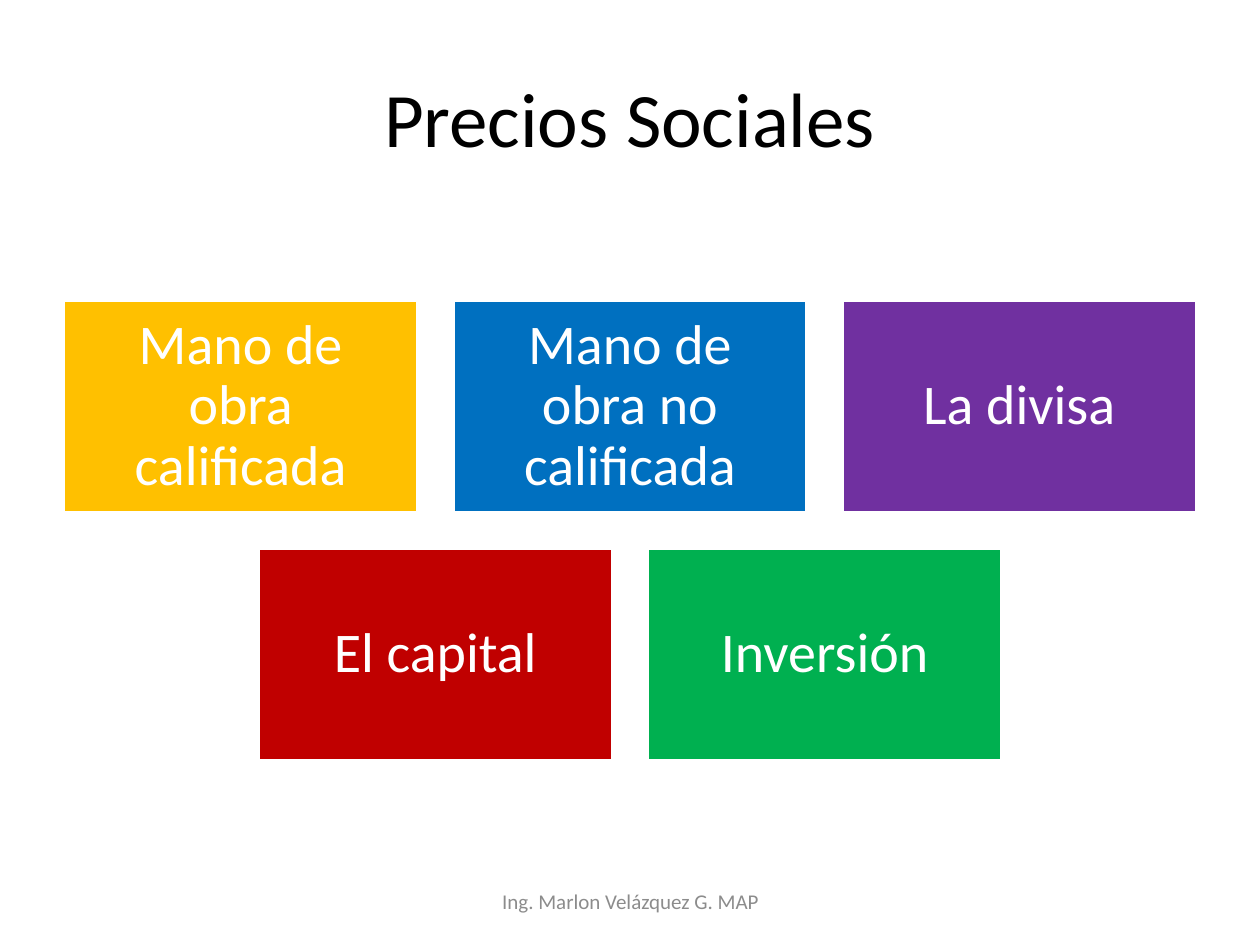
from pptx import Presentation
from pptx.dml.color import RGBColor
from pptx.enum.shapes import MSO_SHAPE
from pptx.enum.text import MSO_ANCHOR, PP_ALIGN
from pptx.util import Inches, Pt

RECTANGLE = MSO_SHAPE.RECTANGLE
MIDDLE = MSO_ANCHOR.MIDDLE
CENTER = PP_ALIGN.CENTER
SLIDE_WIDTH, SLIDE_HEIGHT = 10, 7.5
BOX_WIDTH, BOX_HEIGHT, GAP = 2.81, 1.69, 0.28
ROWS_TOP = 2.38


def rgb(value):
    return RGBColor.from_string(value)


def write_text(shape, text, size, color, margins=(0.1, 0.05), spacing=1.0):
    frame = shape.text_frame
    side, edge = (Inches(margin) for margin in margins)
    frame_format = {
        "word_wrap": True, "vertical_anchor": MIDDLE,
        "margin_left": side, "margin_right": side,
        "margin_top": edge, "margin_bottom": edge,
    }
    for name, value in frame_format.items():
        setattr(frame, name, value)
    para = frame.paragraphs[0]
    para.alignment = CENTER
    para.line_spacing = spacing
    span = para.add_run()
    span.text = text
    for name, value in {"name": "Calibri", "size": Pt(size)}.items():
        setattr(span.font, name, value)
    span.font.color.rgb = rgb(color)


deck = Presentation()
deck.slide_width, deck.slide_height = Inches(SLIDE_WIDTH), Inches(SLIDE_HEIGHT)
page = deck.slides.add_slide(deck.slide_layouts[5])

# Title
title = page.shapes.title
title.left, title.top = Inches(0.5), Inches(0.3)
title.width, title.height = Inches(9), Inches(1.25)
write_text(title, "Precios Sociales", 44, "000000")

# Colored boxes, each row centered on the slide
rows = [
    [("Mano de obra calificada", "FFC000"),
     ("Mano de obra no calificada", "0070C0"),
     ("La divisa", "7030A0")],
    [("El capital", "C00000"), ("Inversión", "00B050")],
]
for row_index, row in enumerate(rows):
    row_width = len(row) * (BOX_WIDTH + GAP) - GAP
    row_left = (SLIDE_WIDTH - row_width) / 2
    top = ROWS_TOP + row_index * (BOX_HEIGHT + GAP)
    for column, (label, fill) in enumerate(row):
        left = row_left + column * (BOX_WIDTH + GAP)
        box = page.shapes.add_shape(
            RECTANGLE, Inches(left), Inches(top), Inches(BOX_WIDTH), Inches(BOX_HEIGHT))
        box.shadow.inherit = False
        box.fill.solid()
        box.fill.fore_color.rgb = rgb(fill)
        box.line.color.rgb = rgb("FFFFFF")
        box.line.width = Pt(2)
        write_text(box, label, 32, "FFFFFF", margins=(0.2, 0.13), spacing=0.9)

# Footer
footer = page.shapes.add_textbox(Inches(3.42), Inches(6.95), Inches(3.17), Inches(0.4))
write_text(footer, "Ing. Marlon Velázquez G. MAP", 12, "8C8C8C")

deck.save("out.pptx")
